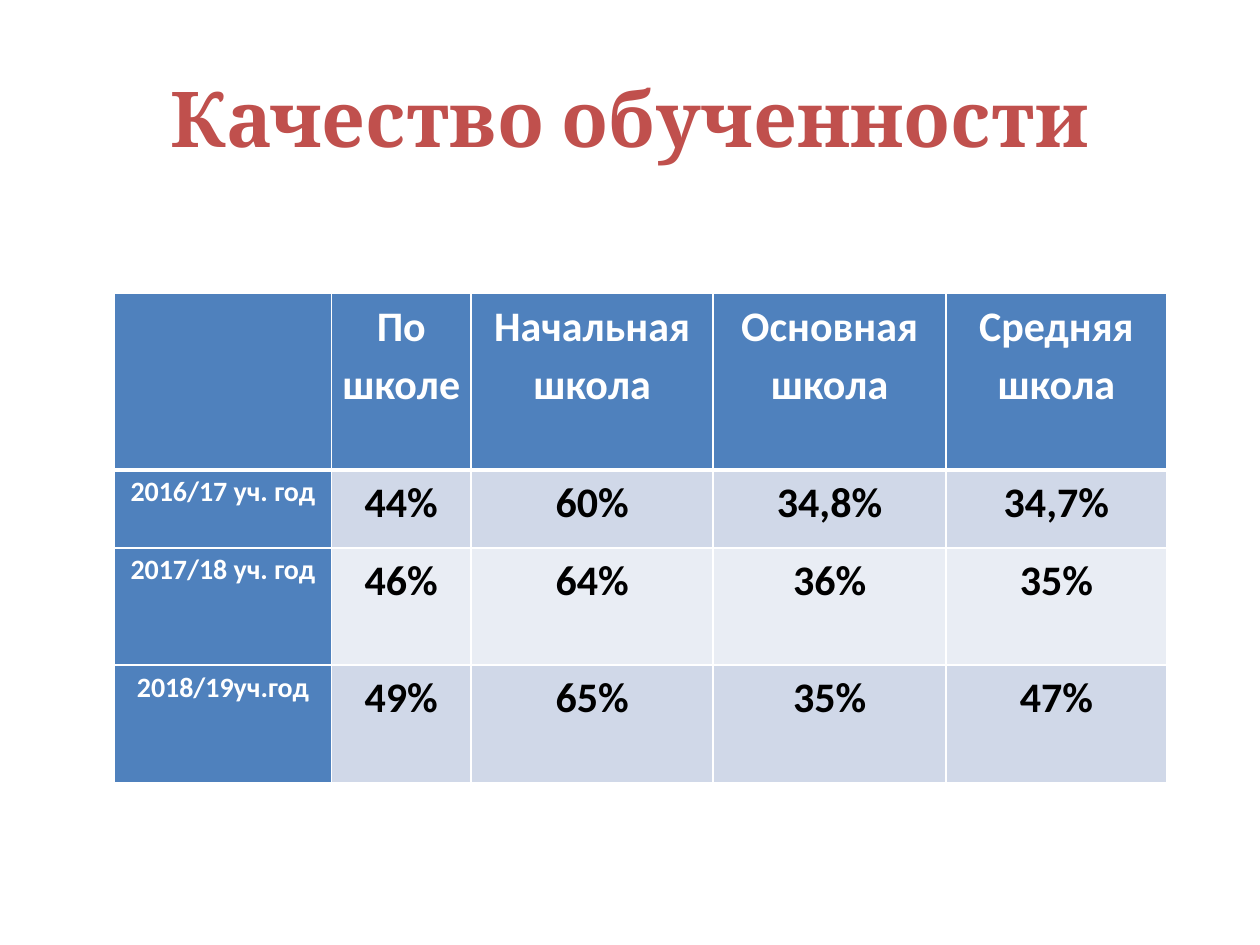
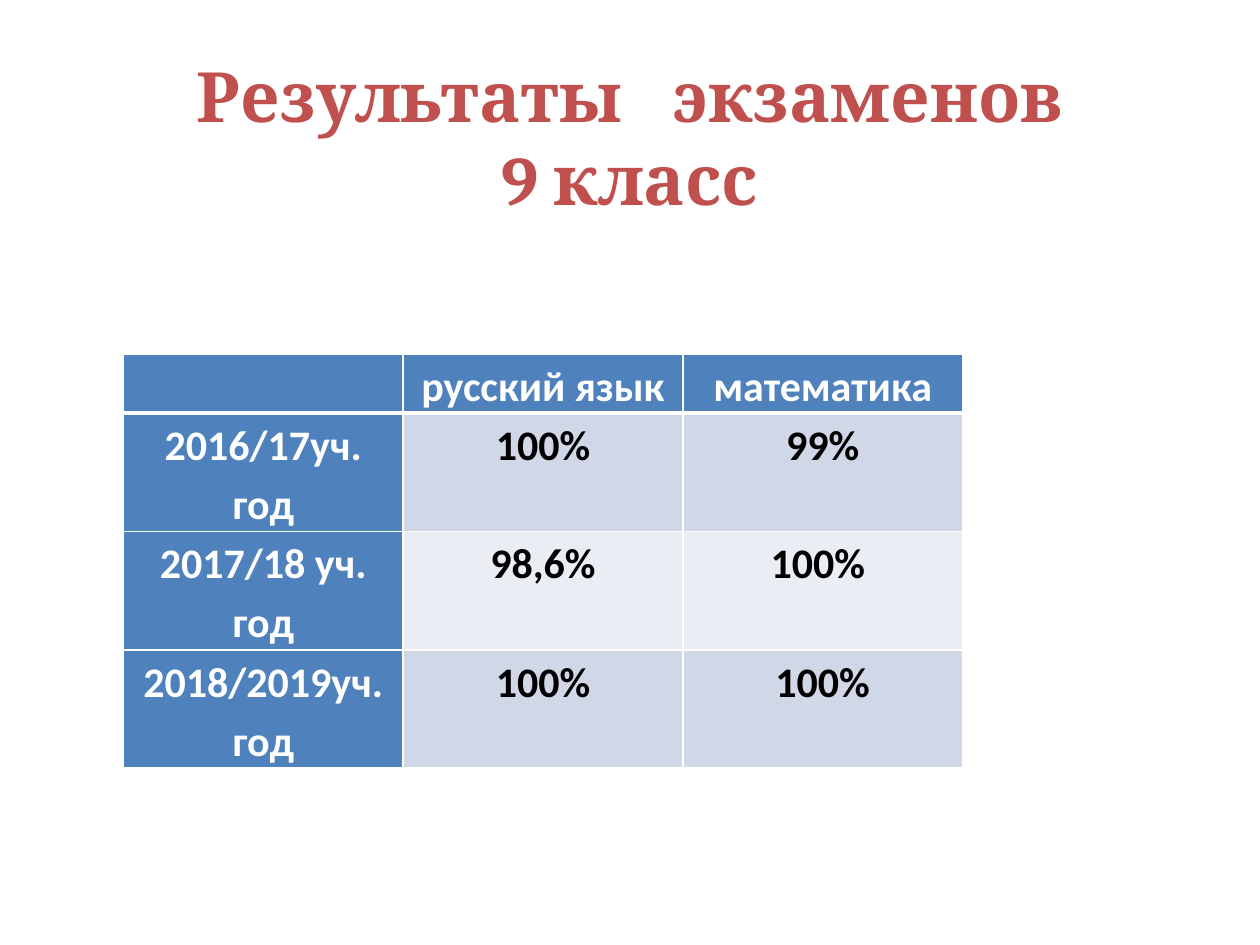
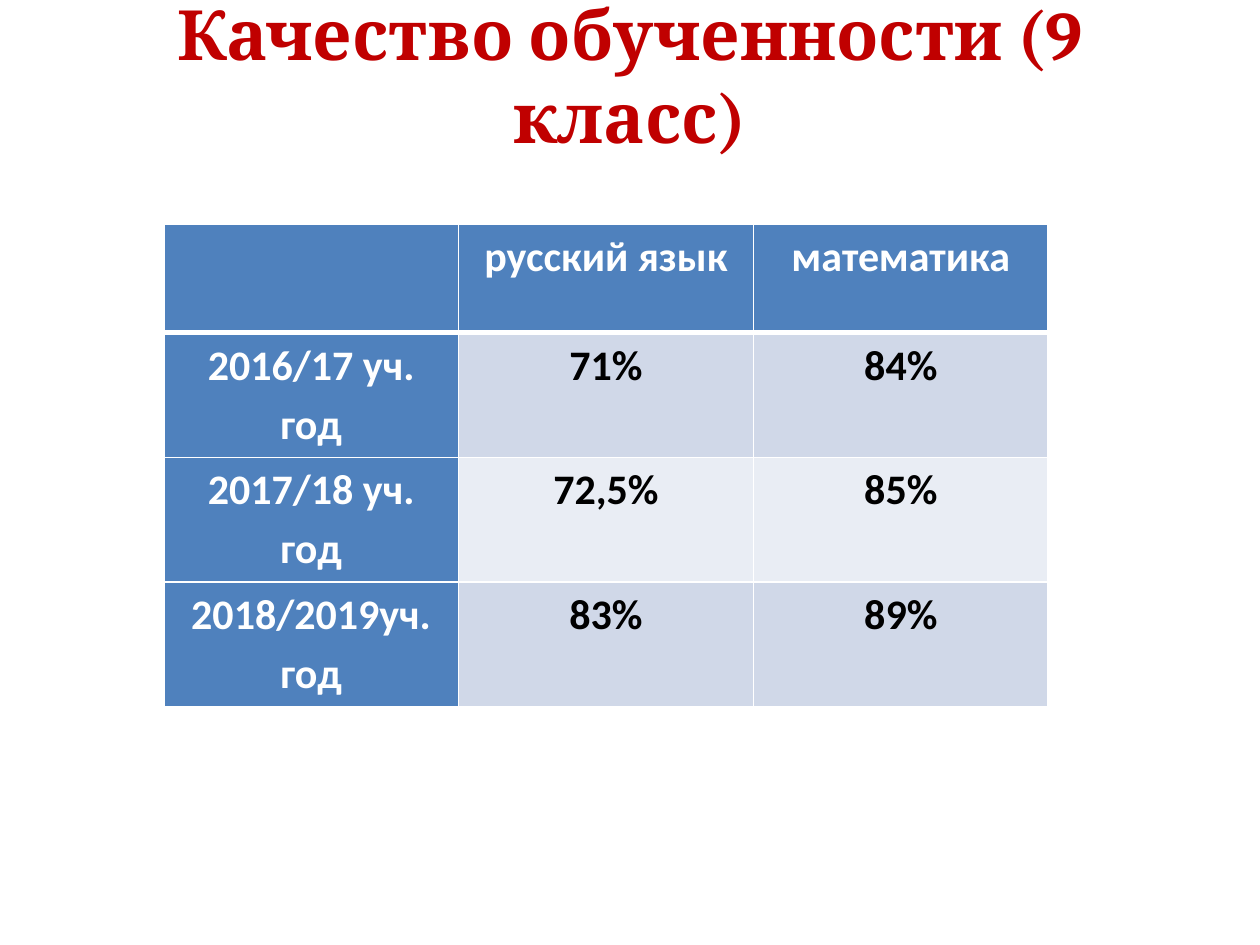
from lxml import etree
from pptx import Presentation
from pptx.dml.color import RGBColor
from pptx.enum.text import MSO_ANCHOR, MSO_AUTO_SIZE, PP_ALIGN
from pptx.oxml.ns import qn
from pptx.util import Inches, Pt

CENTER = PP_ALIGN.CENTER
MIDDLE = MSO_ANCHOR.MIDDLE
NO_FIT = MSO_AUTO_SIZE.NONE

COLORS = {
    "white": "FFFFFF",
    "black": "000000",
    "header": "4F81BD",
    "band_dark": "D0D8E8",
    "band_light": "E9EDF4",
    "title": "C0504D",
    "title_dark": "C00000",
}
TITLE_FONT = "Cambria"
TABLE_FONT = "Calibri"
LINE_SPACING = 1.15
SUBJECTS = ["", "русский язык", "математика"]


def rgb(name):
    return RGBColor.from_string(COLORS[name])


def add_run(p, text, font, size, color):
    r = p.add_run()
    r.text = text
    r.font.name = font
    r.font.size = Pt(size)
    r.font.bold = True
    r.font.color.rgb = rgb(color)
    return r


def add_title(slide, box, lines, size, color="title", bottom=0.05, word_gap=0):
    sp = slide.shapes.title
    sp.left, sp.top, sp.width, sp.height = map(Inches, box)
    tf = sp.text_frame
    tf.word_wrap = True
    tf.auto_size = NO_FIT
    tf.vertical_anchor = MIDDLE
    tf.margin_bottom = Inches(bottom)
    p = tf.paragraphs[0]
    p.alignment = CENTER
    for i, words in enumerate(lines):
        if i:
            p.add_line_break()
        for j, word in enumerate(words):
            if j:
                space = add_run(p, " ", TITLE_FONT, size, color)
                space.font._element.set("spc", str(word_gap * 100))
            add_run(p, word, TITLE_FONT, size, color)


def set_borders(cell, row):
    tc_pr = cell._tc.get_or_add_tcPr()
    widths = {"L": 1, "R": 1, "T": 3 if row == 1 else 1, "B": 3 if row == 0 else 1}
    for side, width in widths.items():
        ln = etree.SubElement(tc_pr, qn(f"a:ln{side}"), w=str(Pt(width)))
        fill = etree.SubElement(ln, qn("a:solidFill"))
        etree.SubElement(fill, qn("a:srgbClr"), val=COLORS["white"])


def fill_cell(cell, text, row, col, label_size):
    is_header = row == 0 or col == 0
    band = "band_dark" if row % 2 else "band_light"
    set_borders(cell, row)
    cell.fill.solid()
    cell.fill.fore_color.rgb = rgb("header" if is_header else band)
    cell.margin_left = cell.margin_right = Inches(0.07)
    cell.margin_top = cell.margin_bottom = 0
    if not text:
        return
    tf = cell.text_frame
    for i, line in enumerate(text.split("\n")):
        p = tf.add_paragraph() if i else tf.paragraphs[0]
        p.alignment = CENTER
        p.line_spacing = LINE_SPACING
        size = label_size if row and col == 0 else 24
        add_run(p, line, TABLE_FONT, size, "white" if is_header else "black")


def add_results_table(slide, left, top, widths, heights, rows, label_size=24):
    frame = slide.shapes.add_table(
        len(rows), len(widths), Inches(left), Inches(top),
        Inches(sum(widths)), Inches(sum(heights)))
    table = frame.table
    for column, width in zip(table.columns, widths):
        column.width = Inches(width)
    for table_row, height in zip(table.rows, heights):
        table_row.height = Inches(height)
    for i, values in enumerate(rows):
        for j, text in enumerate(values):
            fill_cell(table.cell(i, j), text, i, j, label_size)


def school_quality(slide):
    add_title(slide, (0.5, 0.3, 9, 1.25), [["Качество обученности"]], 44)
    add_results_table(
        slide, 0.91, 2.33, [1.72, 1.11, 1.92, 1.85, 1.75], [1.4, 0.62, 0.93, 0.93],
        [["", "По школе", "Начальная школа", "Основная школа", "Средняя школа"],
         ["2016/17 уч. год", "44%", "60%", "34,8%", "34,7%"],
         ["2017/18 уч. год", "46%", "64%", "36%", "35%"],
         ["2018/19уч.год", "49%", "65%", "35%", "47%"]],
        label_size=16)


def exam_results(slide):
    add_title(slide, (0.5, 0.3, 9, 1.56),
              [["Результаты", "экзаменов"], ["9 класс"]], 39.6, word_gap=20)
    add_results_table(
        slide, 0.98, 2.81, [2.22] * 3, [0.46] + [0.94] * 3,
        [SUBJECTS,
         ["2016/17уч. год", "100%", "99%"],
         ["2017/18 уч. год", "98,6%", "100% "],
         ["2018/2019уч.\nгод", "100%", "100%"]])


def ninth_grade_quality(slide):
    add_title(slide, (0.5, 0.3, 9, 1.25), [["Качество обученности (9 класс)"]],
              39.6, "title_dark", bottom=0.72)
    add_results_table(
        slide, 1.3, 1.78, [2.34] * 3, [0.86] + [0.99] * 3,
        [SUBJECTS,
         ["2016/17 уч. год", "71%", "84%"],
         ["2017/18 уч. год", "72,5%", "85%"],
         ["2018/2019уч.\nгод", "83%", "89%"]])


def main():
    prs = Presentation()
    prs.slide_width, prs.slide_height = Inches(10), Inches(7.5)
    for build in (school_quality, exam_results, ninth_grade_quality):
        build(prs.slides.add_slide(prs.slide_layouts[5]))
    prs.save("out.pptx")


if __name__ == "__main__":
    main()
